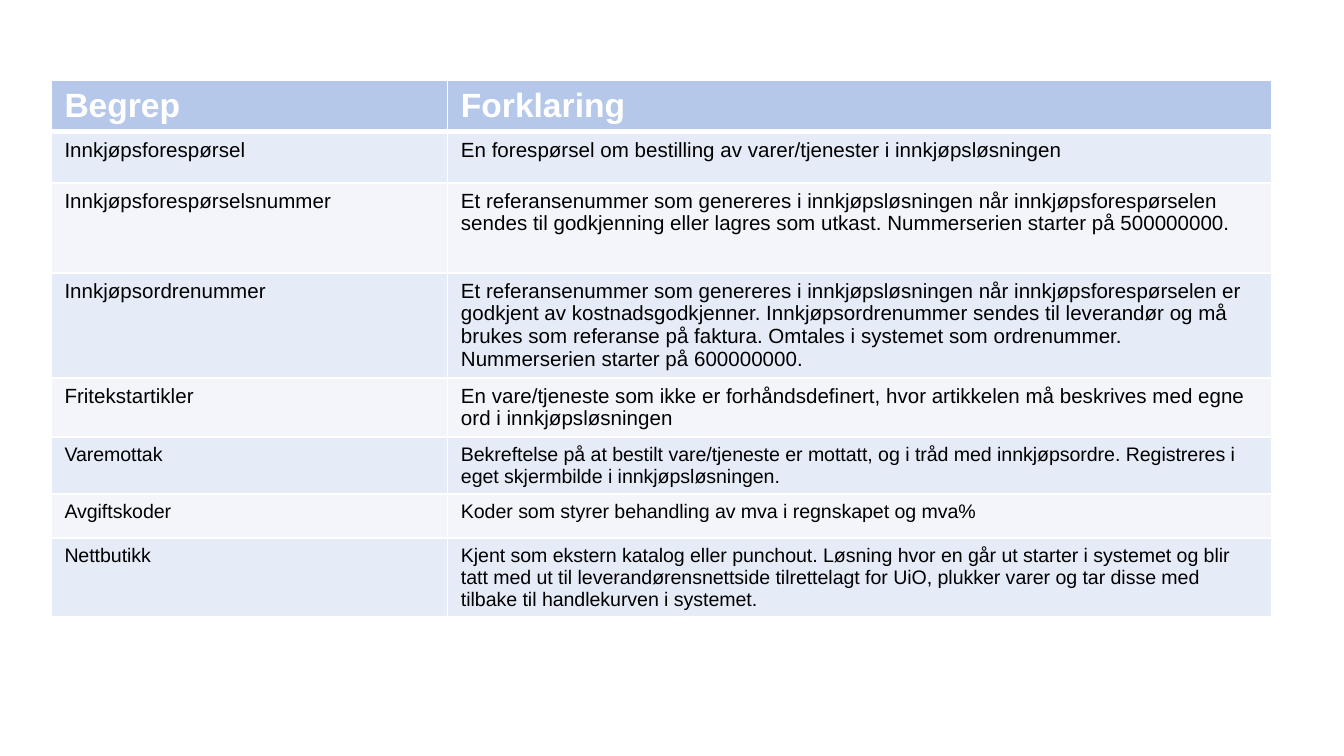
from dataclasses import dataclass

from lxml.etree import SubElement
from pptx import Presentation
from pptx.dml.color import RGBColor as RGB
from pptx.oxml.ns import qn
from pptx.table import _Cell as Cell
from pptx.util import Inches, Pt

SLIDE_W = Inches(10)
SLIDE_H = SLIDE_W * 9 // 16
TABLE_LEFT, TABLE_TOP = Inches(0.38), Inches(0.6)
TABLE_HEIGHT = Inches(4.15)
COLUMNS = (2.95, 6.13)
COLORS = {
    "header": "B6C8E9",
    "odd": "E5EBF7",
    "even": "F3F5FB",
    "white": "FFFFFF",
    "text": "000000",
}


@dataclass(frozen=True)
class Term:
    name: str
    meaning: str
    height: float = 0.33
    size: float = 11


HEADER = Term("Begrep", "Forklaring", size=18)
TERMS = (
    Term("Innkjøpsforespørsel",
         "En forespørsel om bestilling av varer/tjenester i innkjøpsløsningen",
         height=0.38),
    Term("Innkjøpsforespørselsnummer",
         "Et referansenummer som genereres i innkjøpsløsningen når "
         "innkjøpsforespørselen sendes til godkjenning eller lagres som utkast. "
         "Nummerserien starter på 500000000.",
         height=0.67),
    Term("Innkjøpsordrenummer",
         "Et referansenummer som genereres i innkjøpsløsningen når "
         "innkjøpsforespørselen er godkjent av kostnadsgodkjenner. "
         "Innkjøpsordrenummer sendes til leverandør og må brukes som referanse "
         "på faktura. Omtales i systemet som ordrenummer. "
         "Nummerserien starter på 600000000.",
         height=0.38),
    Term("Fritekstartikler",
         "En vare/tjeneste som ikke er forhåndsdefinert, hvor artikkelen må "
         "beskrives med egne ord i innkjøpsløsningen"),
    Term("Varemottak",
         "Bekreftelse på at bestilt vare/tjeneste er mottatt, og i tråd med "
         "innkjøpsordre. Registreres i eget skjermbilde i innkjøpsløsningen.",
         size=10.5),
    Term("Avgiftskoder",
         "Koder som styrer behandling av mva i regnskapet og mva%",
         size=10.5),
    Term("Nettbutikk",
         "Kjent som ekstern katalog eller punchout. Løsning hvor en går ut "
         "starter i systemet og blir tatt med ut til leverandørensnettside "
         "tilrettelagt for UiO, plukker varer og tar disse med tilbake til "
         "handlekurven i systemet.",
         size=10.5),
)


def add_borders(cell: Cell, widths: dict[str, float]) -> None:
    """Put white lines on the cell; they must precede its fill in the XML."""
    tc_pr = cell._tc.get_or_add_tcPr()
    for side, width in widths.items():
        line = SubElement(tc_pr, qn(f"a:ln{side}"), w=str(Pt(width)))
        fill = SubElement(line, qn("a:solidFill"))
        SubElement(fill, qn("a:srgbClr"), val=COLORS["white"])


def fill_cell(cell: Cell, text: str, size: float, row: int) -> None:
    is_header = row == 0
    add_borders(cell, {"L": 1, "R": 1, "T": 3 if row == 1 else 1,
                       "B": 3 if is_header else 1})
    band = "header" if is_header else "odd" if row % 2 else "even"
    cell.fill.solid()
    cell.fill.fore_color.rgb = RGB.from_string(COLORS[band])

    r = cell.text_frame.paragraphs[0].add_run()
    r.text = text
    formats = {"name": "Arial", "size": Pt(size), "bold": is_header}
    for key, value in formats.items():
        setattr(r.font, key, value)
    r.font.color.rgb = RGB.from_string(COLORS["white" if is_header else "text"])


def main() -> None:
    prs = Presentation()
    prs.slide_width, prs.slide_height = SLIDE_W, SLIDE_H
    slide = prs.slides.add_slide(prs.slide_layouts[6])

    rows = (HEADER, *TERMS)
    frame = slide.shapes.add_table(len(rows), len(COLUMNS), TABLE_LEFT, TABLE_TOP,
                                   Inches(sum(COLUMNS)), TABLE_HEIGHT)
    table = frame.table
    for column, width in zip(table.columns, COLUMNS):
        column.width = Inches(width)
    for i, term in enumerate(rows):
        table.rows[i].height = Inches(term.height)
        for j, text in enumerate((term.name, term.meaning)):
            fill_cell(table.cell(i, j), text, term.size, i)
    frame.height = TABLE_HEIGHT

    prs.save("out.pptx")


if __name__ == "__main__":
    main()
